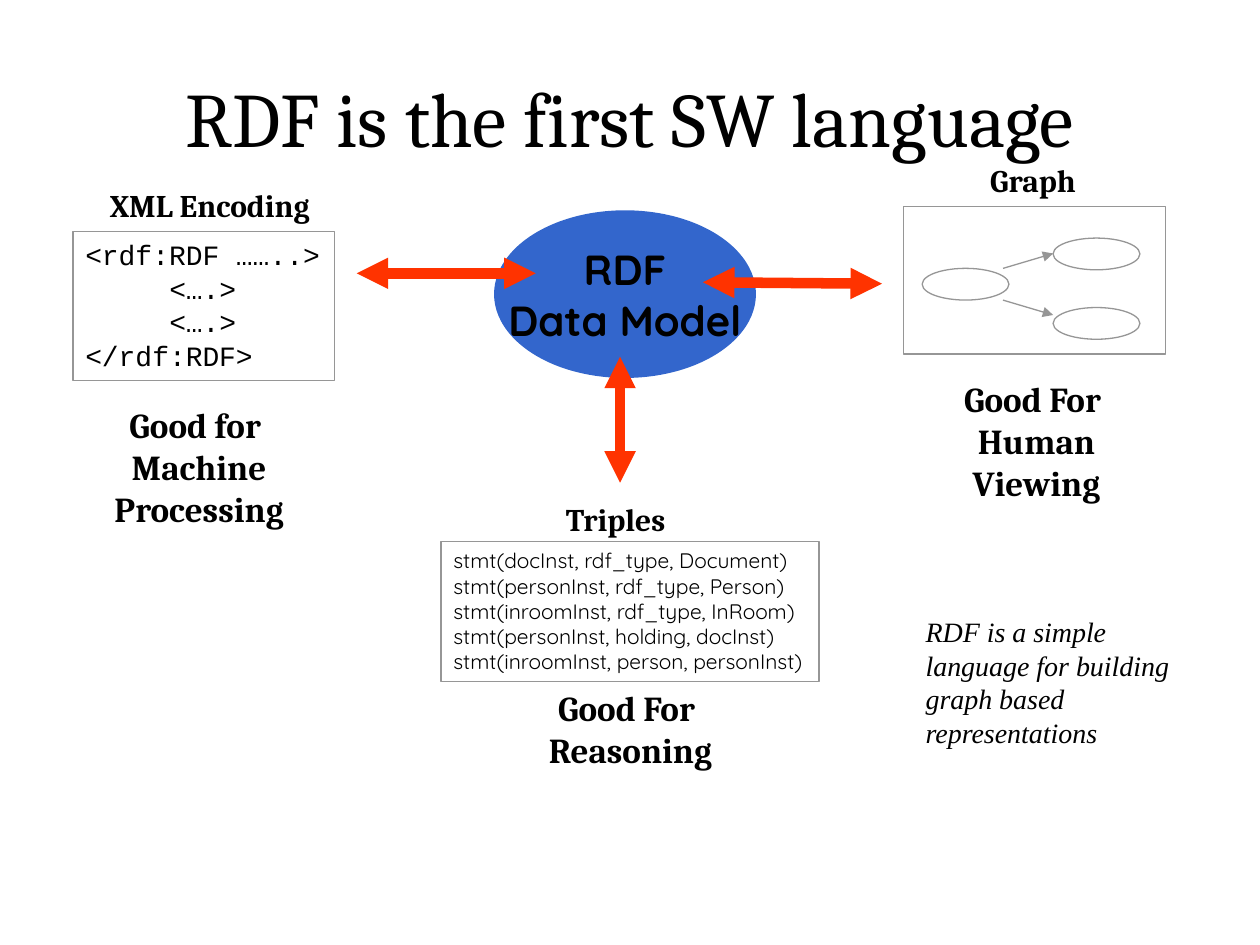
from dataclasses import dataclass

from lxml.etree import SubElement
from pptx import Presentation
from pptx.dml.color import RGBColor
from pptx.enum.shapes import MSO_CONNECTOR, MSO_SHAPE
from pptx.enum.text import MSO_ANCHOR, PP_ALIGN
from pptx.oxml.ns import qn
from pptx.util import Cm, Pt

BLACK = RGBColor(0x00, 0x00, 0x00)
GRAY = RGBColor(0x96, 0x96, 0x96)
BLUE = RGBColor(0x33, 0x66, 0xCC)
RED = RGBColor(0xFF, 0x33, 0x00)


@dataclass(frozen=True)
class Box:
    """Left, top, width and height in centimetres."""
    left: float
    top: float
    width: float
    height: float

    def lengths(self) -> tuple:
        return Cm(self.left), Cm(self.top), Cm(self.width), Cm(self.height)


@dataclass(frozen=True)
class Style:
    font: str
    size: float
    bold: bool = False
    italic: bool = False
    align: PP_ALIGN = PP_ALIGN.CENTER
    anchor: MSO_ANCHOR = MSO_ANCHOR.TOP
    wrap: bool = False


@dataclass(frozen=True)
class Label:
    box: Box
    text: str
    style: Style


@dataclass(frozen=True)
class Arrow:
    start: tuple[float, float]
    end: tuple[float, float]
    color: RGBColor = GRAY
    width: float = 0.75
    both_ends: bool = False


TITLE = Style("Cambria", 44, anchor=MSO_ANCHOR.MIDDLE, wrap=True)
HEADING = Style("Cambria", 18, bold=True)
BENEFIT = Style("Cambria", 20, bold=True)
MODEL = Style("Quicksand", 24, bold=True, anchor=MSO_ANCHOR.MIDDLE)
XML_CODE = Style("Courier New", 16, align=PP_ALIGN.LEFT, wrap=True)
STATEMENTS = Style("Quicksand", 12, align=PP_ALIGN.LEFT, wrap=True)
REMARK = Style("Times New Roman", 16, italic=True, align=PP_ALIGN.LEFT, wrap=True)

LABELS = [
    Label(Box(1.27, 0.76, 22.86, 3.18), "RDF is the first SW language", TITLE),
    Label(Box(1.55, 3.63, 5.36, 1.02), "XML Encoding", HEADING),
    Label(Box(19.53, 3.12, 2.59, 1.02), "Graph", HEADING),
    Label(Box(11, 9.96, 2.82, 1.02), "Triples", HEADING),
    Label(Box(1.78, 8, 4.47, 2.79), "Good for \nMachine\vProcessing", BENEFIT),
    Label(Box(18.85, 7.49, 4.09, 2.79), "Good For \nHuman\vViewing", BENEFIT),
    Label(Box(10.54, 13.72, 4.34, 1.96), "Good For \nReasoning", BENEFIT),
    Label(Box(18.41, 12.27, 6.15, 2.97),
          "RDF is a simple language for building graph based representations", REMARK),
]

XML_BOX = Label(Box(1.47, 4.67, 5.28, 3),
                "<rdf:RDF ……..>\n<….>\n<….>\n</rdf:RDF>", XML_CODE)
TRIPLES_BOX = Label(Box(8.89, 10.92, 7.62, 2.82),
                    "stmt(docInst, rdf_type, Document)\n"
                    "stmt(personInst, rdf_type, Person)\n"
                    "stmt(inroomInst, rdf_type, InRoom)\n"
                    "stmt(personInst, holding, docInst)\n"
                    "stmt(inroomInst, person, personInst)", STATEMENTS)
DATA_MODEL = Label(Box(9.96, 4.24, 5.28, 3.38), "RDF\nData Model", MODEL)

GRAPH_FRAME = Box(18.21, 4.17, 5.28, 2.97)
GRAPH_NODES = [Box(left, top, 1.75, 0.64)
               for left, top in ((18.59, 5.41), (21.23, 4.8), (21.23, 6.2))]
GRAPH_EDGES = [Arrow((20.22, 5.41), (21.23, 5.11)),
               Arrow((20.22, 6.05), (21.23, 6.35))]
MODEL_ARROWS = [Arrow(start, end, RED, 6, True) for start, end in (
    ((7.19, 5.51), (10.8, 5.51)),
    ((14.17, 5.69), (17.78, 5.72)),
    ((12.5, 7.19), (12.5, 9.73)),
)]


def write(shape, text: str, style: Style) -> None:
    frame = shape.text_frame
    frame.text = text
    frame.word_wrap = style.wrap
    frame.vertical_anchor = style.anchor
    for paragraph in frame.paragraphs:
        paragraph.alignment = style.align
        for run in paragraph.runs:
            font = run.font
            font.name, font.size = style.font, Pt(style.size)
            font.bold, font.italic = style.bold, style.italic
            font.color.rgb = BLACK


def add_label(slide, label: Label) -> None:
    write(slide.shapes.add_textbox(*label.box.lengths()), label.text, label.style)


def add_outline(slide, kind: MSO_SHAPE, box: Box):
    shape = slide.shapes.add_shape(kind, *box.lengths())
    shape.shadow.inherit = False
    shape.fill.background()
    shape.line.color.rgb = GRAY
    shape.line.width = Pt(0.75)
    return shape


def add_panel(slide, panel: Label):
    shape = add_outline(slide, MSO_SHAPE.RECTANGLE, panel.box)
    write(shape, panel.text, panel.style)
    return shape


def add_arrow(slide, arrow: Arrow) -> None:
    points = [Cm(value) for value in (*arrow.start, *arrow.end)]
    connector = slide.shapes.add_connector(MSO_CONNECTOR.STRAIGHT, *points)
    connector.line.color.rgb = arrow.color
    connector.line.width = Pt(arrow.width)
    line = connector.line._get_or_add_ln()
    for end in ("a:headEnd", "a:tailEnd") if arrow.both_ends else ("a:tailEnd",):
        SubElement(line, qn(end), type="triangle")
    SubElement(connector._element.spPr, qn("a:effectLst"))


def main() -> None:
    prs = Presentation()
    prs.slide_width, prs.slide_height = Cm(25.4), Cm(19.05)
    slide = prs.slides.add_slide(prs.slide_layouts[6])

    # XML encoding, with its inner elements indented by five characters
    xml_panel = add_panel(slide, XML_BOX)
    for paragraph in xml_panel.text_frame.paragraphs[1:3]:
        paragraph._p.get_or_add_pPr().set("marL", str(Pt(48)))

    # Graph
    for node in GRAPH_NODES:
        add_outline(slide, MSO_SHAPE.OVAL, node)
    for edge in GRAPH_EDGES:
        add_arrow(slide, edge)
    add_outline(slide, MSO_SHAPE.RECTANGLE, GRAPH_FRAME)

    # Triples
    add_panel(slide, TRIPLES_BOX)

    # Data model and its links to the three forms
    model = add_outline(slide, MSO_SHAPE.OVAL, DATA_MODEL.box)
    model.fill.solid()
    model.fill.fore_color.rgb = BLUE
    model.line.fill.background()
    write(model, DATA_MODEL.text, DATA_MODEL.style)
    for arrow in MODEL_ARROWS:
        add_arrow(slide, arrow)

    # Title, headings, benefits and remark
    for label in LABELS:
        add_label(slide, label)

    prs.save("out.pptx")


if __name__ == "__main__":
    main()
